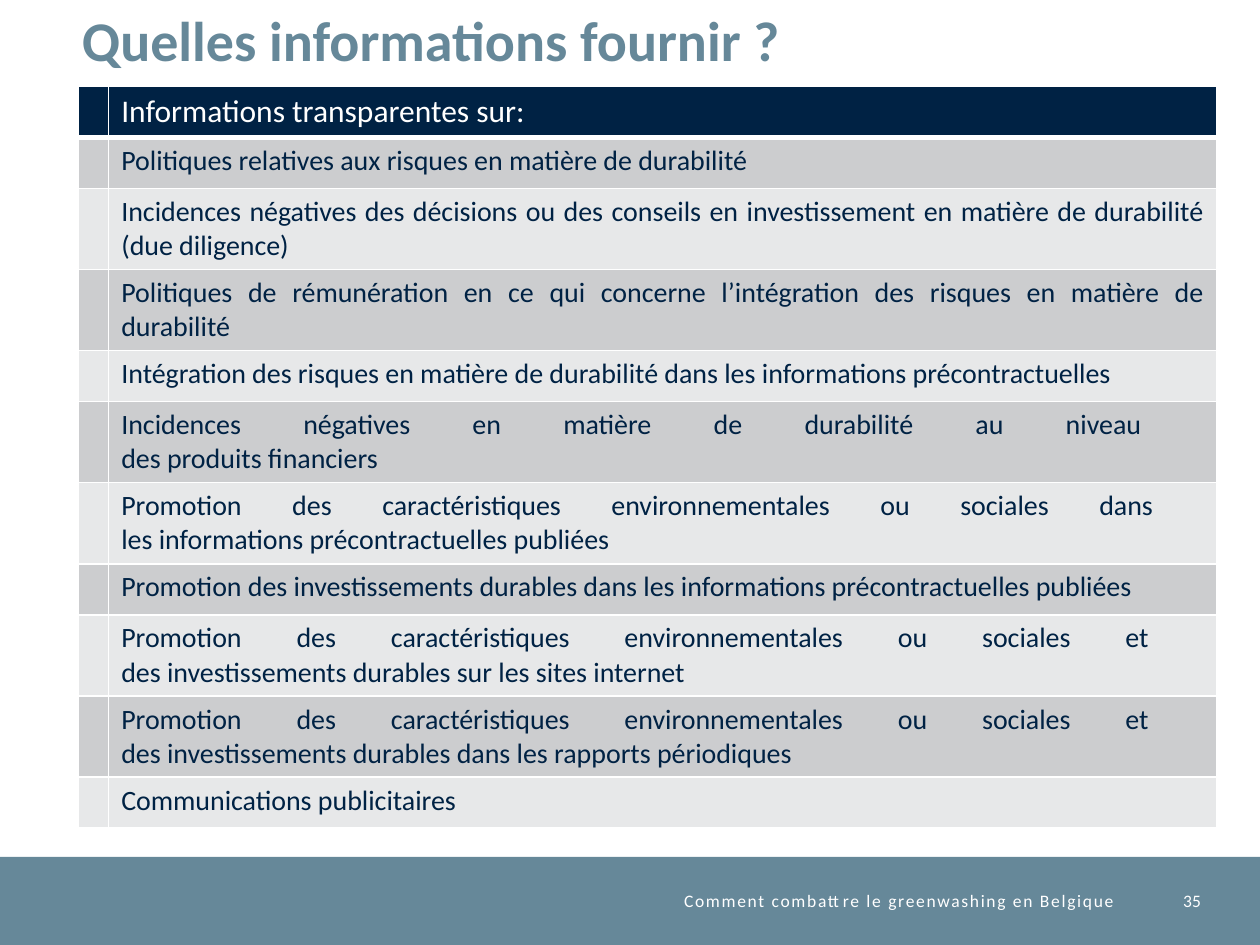
from copy import deepcopy
from dataclasses import dataclass, field

from lxml.etree import SubElement
from pptx import Presentation
from pptx.dml.color import RGBColor
from pptx.enum.shapes import MSO_SHAPE
from pptx.enum.text import MSO_ANCHOR, PP_ALIGN
from pptx.oxml.ns import qn
from pptx.util import Pt

COLORS = {
    "navy": "002244",
    "slate": "668899",
    "white": "FFFFFF",
    "dark band": "CCCDCF",
    "light band": "E7E8E9",
}
TOPICS = [
    "Politiques relatives aux risques en matière de durabilité",
    "Incidences négatives des décisions ou des conseils en investissement "
    "en matière de durabilité (due diligence)",
    "Politiques de rémunération en ce qui concerne l’intégration des risques "
    "en matière de durabilité",
    "Intégration des risques en matière de durabilité dans les informations précontractuelles",
    "Incidences négatives en matière de durabilité au niveau \ndes produits financiers",
    "Promotion des caractéristiques environnementales ou sociales dans \n"
    "les informations précontractuelles publiées",
    "Promotion des investissements durables dans les informations précontractuelles publiées",
    "Promotion des caractéristiques environnementales ou sociales et \n"
    "des investissements durables sur les sites internet",
    "Promotion des caractéristiques environnementales ou sociales et \n"
    "des investissements durables dans les rapports périodiques",
    "Communications publicitaires",
]
ROW_HEIGHT = 29.2
COLUMN_WIDTHS = (16.6, 633.4)
BAND_TOP, BAND_HEIGHT = 489.6, 50.4


@dataclass
class Label:
    text: str
    box: tuple[float, float, float, float]
    color: str
    size: float
    bold: bool = False
    letter_spacing: float = 0
    frame_format: dict = field(default_factory=dict)
    paragraph_format: dict = field(default_factory=dict)


FOOTER = {
    "color": "white",
    "size": 10,
    "frame_format": {"vertical_anchor": MSO_ANCHOR.MIDDLE},
    "paragraph_format": {"alignment": PP_ALIGN.RIGHT},
}
LABELS = [
    Label("Quelles informations fournir ?", (46.8, 9.4, 621.4, 60.5), "slate", 32,
          bold=True, paragraph_format={"line_spacing": Pt(32)}),
    Label("35", (650.9, BAND_TOP, 35.3, BAND_HEIGHT), **FOOTER),
    Label("Comment combattre le greenwashing en Belgique",
          (190.1, BAND_TOP, 446.4, BAND_HEIGHT), letter_spacing=1, **FOOTER),
]


def rgb(color: str) -> RGBColor:
    return RGBColor.from_string(COLORS[color])


def apply_format(target, values: dict) -> None:
    for name, value in values.items():
        setattr(target, name, value)


def write(paragraph, text: str, color: str, size: float, bold: bool = False) -> None:
    """Fill a paragraph, giving line breaks the same format as the runs."""
    paragraph.text = text
    for run in paragraph.runs:
        apply_format(run.font, {"name": "Calibri", "size": Pt(size), "bold": bold})
        run.font.color.rgb = rgb(color)
    for line_break in paragraph._p.findall(qn("a:br")):
        line_break.append(deepcopy(paragraph.runs[0].font._element))


def draw_label(slide, label: Label) -> None:
    frame = slide.shapes.add_textbox(*map(Pt, label.box)).text_frame
    margins = dict.fromkeys(("margin_left", "margin_top", "margin_right", "margin_bottom"), 0)
    apply_format(frame, {"word_wrap": True, **margins, **label.frame_format})
    paragraph = frame.paragraphs[0]
    apply_format(paragraph, label.paragraph_format)
    write(paragraph, label.text, label.color, label.size, label.bold)
    if label.letter_spacing:
        paragraph.runs[0].font._element.set("spc", str(round(label.letter_spacing * 100)))


def style_cell(cell, fill: str, bottom_width: float) -> None:
    """Give a cell white borders and a solid fill."""
    properties = cell._tc.get_or_add_tcPr()
    for side, width in {"L": 1, "R": 1, "T": 1, "B": bottom_width}.items():
        line = SubElement(properties, qn(f"a:ln{side}"), w=str(Pt(width)))
        SubElement(SubElement(line, qn("a:solidFill")), qn("a:srgbClr"), val=COLORS["white"])
    cell.fill.solid()
    cell.fill.fore_color.rgb = rgb(fill)


def draw_topics(slide) -> None:
    row_count = len(TOPICS) + 1
    table = slide.shapes.add_table(
        row_count, 2, Pt(44.9), Pt(49.2), Pt(sum(COLUMN_WIDTHS)), Pt(row_count * ROW_HEIGHT)
    ).table
    apply_format(table, {"first_row": False, "horz_banding": False})
    for column, width in zip(table.columns, COLUMN_WIDTHS):
        column.width = Pt(width)
    for index, text in enumerate(["Informations transparentes sur:", *TOPICS]):
        table.rows[index].height = Pt(ROW_HEIGHT)
        is_header = index == 0
        band = "dark band" if index % 2 else "light band"
        for cell in table.rows[index].cells:
            style_cell(cell, "navy" if is_header else band, 3 if is_header else 1)
        paragraph = table.cell(index, 1).text_frame.paragraphs[0]
        if is_header:
            write(paragraph, text, "white", 18)
        else:
            paragraph.alignment = PP_ALIGN.JUSTIFY
            write(paragraph, text, "navy", 16)


def draw_footer_band(slide) -> None:
    band = slide.shapes.add_shape(
        MSO_SHAPE.RECTANGLE, 0, Pt(BAND_TOP), Pt(720), Pt(BAND_HEIGHT)
    )
    band.shadow.inherit = False
    band.fill.solid()
    band.fill.fore_color.rgb = rgb("slate")
    band.line.fill.background()


def main() -> None:
    presentation = Presentation()
    apply_format(presentation, {"slide_width": Pt(720), "slide_height": Pt(540)})
    slide = presentation.slides.add_slide(presentation.slide_layouts[6])
    draw_footer_band(slide)
    draw_topics(slide)
    for label in LABELS:
        draw_label(slide, label)
    presentation.save("out.pptx")


if __name__ == "__main__":
    main()
